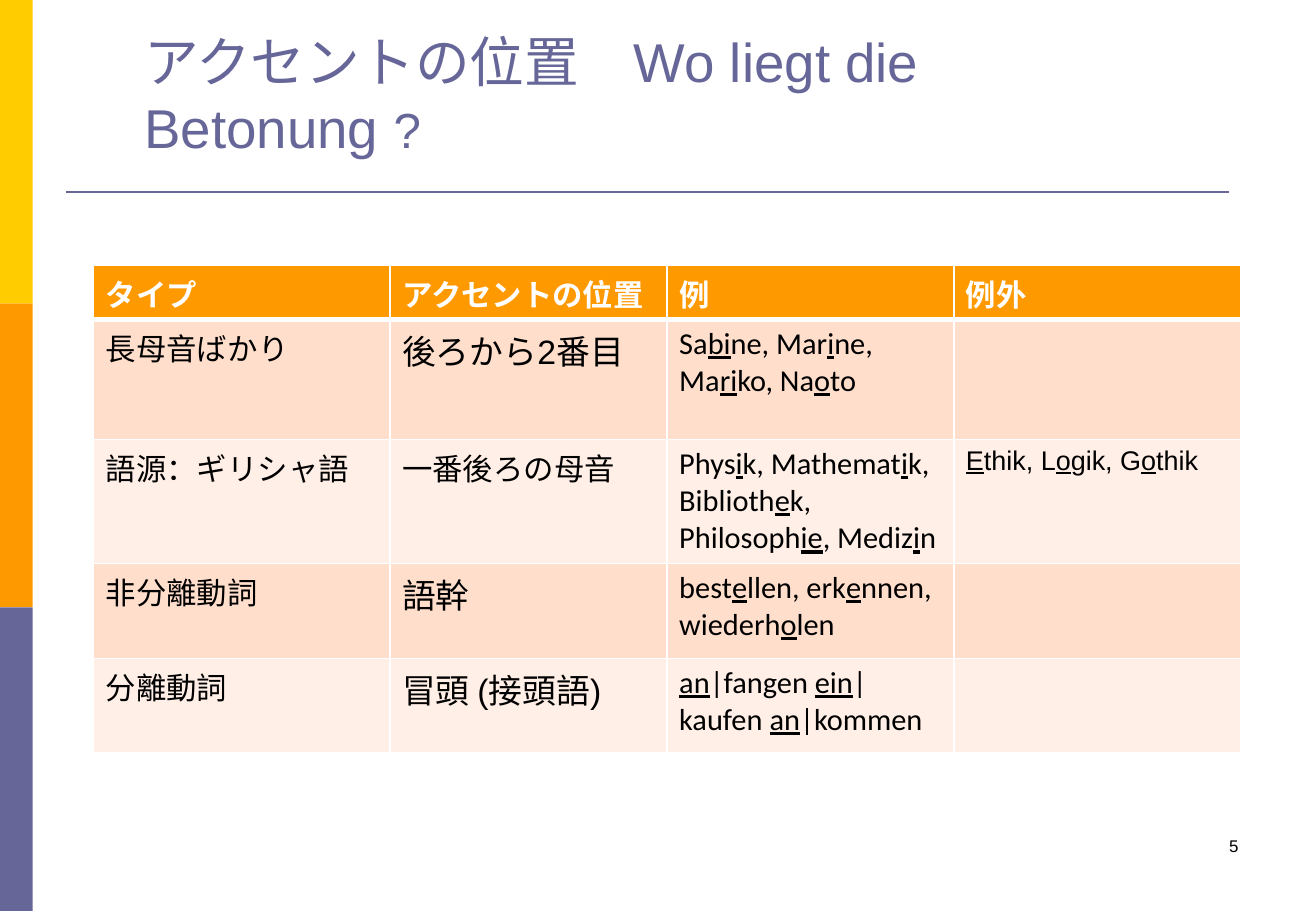
from pptx import Presentation
from pptx.dml.color import RGBColor
from pptx.enum import shapes, text
from pptx.oxml import parse_xml
from pptx.oxml.ns import nsdecls
from pptx.util import Inches, Pt


def rgb(value):
    return RGBColor.from_string(value)


class Deck:
    YELLOW, ORANGE, VIOLET = "FFCC00", "FF9900", "666699"
    BLACK, WHITE = "000000", "FFFFFF"
    BANDS = ("FFDECC", "FFEFE7")

    def __init__(self, width, height):
        self.prs = Presentation()
        self.prs.slide_width = Inches(width)
        self.prs.slide_height = Inches(height)
        self.s = self.prs.slides.add_slide(self.prs.slide_layouts[6])

    def style(self, r, size, color, font="Arial", bold=False, underline=False):
        r.font.size = Pt(size)
        r.font.name = font
        r.font.color.rgb = rgb(color)
        r.font.bold = bold
        r.font.underline = underline

    def bar(self, x, y, w, h, color):
        sp = self.s.shapes.add_shape(
            shapes.MSO_SHAPE.RECTANGLE, Inches(x), Inches(y), Inches(w), Inches(h))
        sp.shadow.inherit = False
        sp.fill.solid()
        sp.fill.fore_color.rgb = rgb(color)
        sp.line.fill.background()

    def rule(self, x1, x2, y):
        line = self.s.shapes.add_connector(
            shapes.MSO_CONNECTOR.STRAIGHT, Inches(x1), Inches(y), Inches(x2), Inches(y))
        line.line.color.rgb = rgb(self.VIOLET)
        line.line.width = Pt(1.5)
        line._element.spPr.append(parse_xml(f"<a:effectLst {nsdecls('a')}/>"))

    def textbox(self, x, y, w, h, runs, color, align=text.PP_ALIGN.LEFT,
                anchor=text.MSO_ANCHOR.TOP, right=0.1):
        tf = self.s.shapes.add_textbox(
            Inches(x), Inches(y), Inches(w), Inches(h)).text_frame
        tf.word_wrap = True
        tf.vertical_anchor = anchor
        tf.margin_right = Inches(right)
        p = tf.paragraphs[0]
        p.alignment = align
        for words, size in runs:
            r = p.add_run()
            r.text = words
            self.style(r, size, color)

    def borders(self, cell, top, bottom):
        tcPr = cell._tc.get_or_add_tcPr()
        for i, (side, width) in enumerate(
                (("L", 1), ("R", 1), ("T", top), ("B", bottom))):
            tcPr.insert(i, parse_xml(
                f'<a:ln{side} {nsdecls("a")} w="{Pt(width)}"><a:solidFill>'
                f'<a:srgbClr val="{self.WHITE}"/></a:solidFill></a:ln{side}>'))

    def cell(self, cell, words, size, font, color, bold, fill):
        cell.fill.solid()
        cell.fill.fore_color.rgb = rgb(fill)
        tf = cell.text_frame
        for i, line in enumerate(words.split("\n")):
            p = tf.add_paragraph() if i else tf.paragraphs[0]
            for j, part in enumerate(line.split("_")):
                if part:
                    r = p.add_run()
                    r.text = part
                    self.style(r, size, color, font, bold, j % 2 == 1)

    def table(self, x, y, widths, heights, header, rows):
        tbl = self.s.shapes.add_table(
            len(heights), len(widths), Inches(x), Inches(y),
            Inches(sum(widths)), Inches(sum(heights))).table
        for col, w in zip(tbl.columns, widths):
            col.width = Inches(w)
        for row, h in zip(tbl.rows, heights):
            row.height = Inches(h)
        for i, row in enumerate([[(h, 18, "Arial") for h in header]] + rows):
            head = i == 0
            fill = self.ORANGE if head else self.BANDS[(i - 1) % 2]
            color = self.WHITE if head else self.BLACK
            for j, (words, size, font) in enumerate(row):
                c = tbl.cell(i, j)
                self.cell(c, words, size, font, color, head, fill)
                self.borders(c, 3 if i == 1 else 1, 3 if head else 1)


def accent_row(kind, position, examples, exceptions="", position_size=20):
    return [(kind, 18, "Arial"), (position, position_size, "Arial"),
            (examples, 18, "Calibri"), (exceptions, 16, "Arial")]


def main():
    deck = Deck(10.83, 7.5)
    for i, color in enumerate((deck.YELLOW, deck.ORANGE, deck.VIOLET)):
        deck.bar(0, 2.5 * i, 0.27, 2.5, color)
    deck.rule(0.54, 10.11, 1.58)
    deck.textbox(1.09, 0.36, 8.9, 1,
                 [("アクセントの位置　Wo liegt die Betonung ", 32.4), ("?", 29.2)],
                 deck.VIOLET, anchor=text.MSO_ANCHOR.BOTTOM, right=0.6)
    deck.textbox(7.76, 6.83, 2.53, 0.5, [("5", 10)], deck.BLACK,
                 align=text.PP_ALIGN.RIGHT)
    deck.table(
        0.77, 2.18, (2.44, 2.28, 2.36, 2.36), (0.45, 0.99, 1.02, 0.78, 0.78),
        ("タイプ", "アクセントの位置", "例", "例外"),
        [accent_row("長母音ばかり", "後ろから2番目",
                    "Sa_bi_ne, Mar_i_ne, Ma_ri_ko, Na_o_to"),
         accent_row("語源：ギリシャ語", "一番後ろの母音",
                    "Phys_i_k, Mathemat_i_k,\n"
                    "Biblioth_e_k, Philosoph_ie_, Mediz_i_n",
                    "_E_thik, L_o_gik, G_o_thik", 18),
         accent_row("非分離動詞", "語幹",
                    "best_e_llen, erk_e_nnen, wiederh_o_len"),
         accent_row("分離動詞", "冒頭 (接頭語)",
                    "_an_|fangen _ein_|kaufen _an_|kommen")])
    deck.prs.save("out.pptx")


if __name__ == "__main__":
    main()
